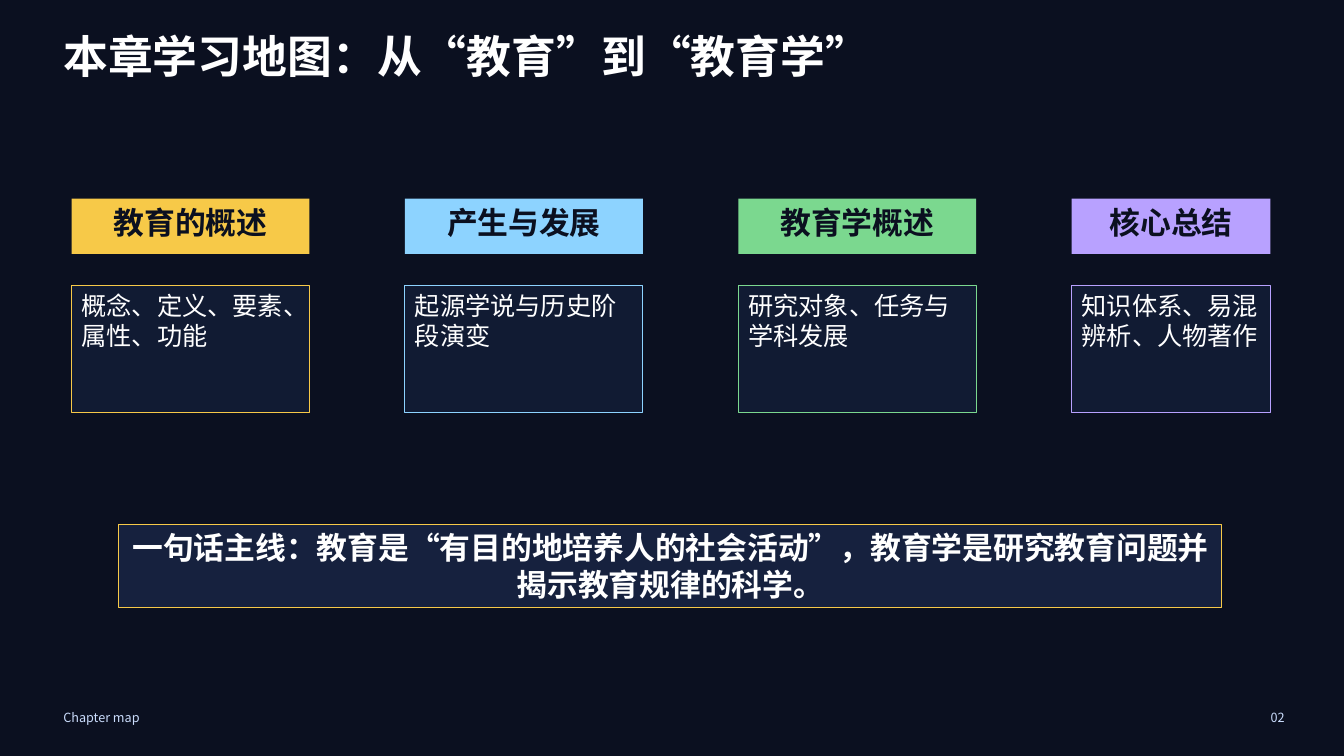
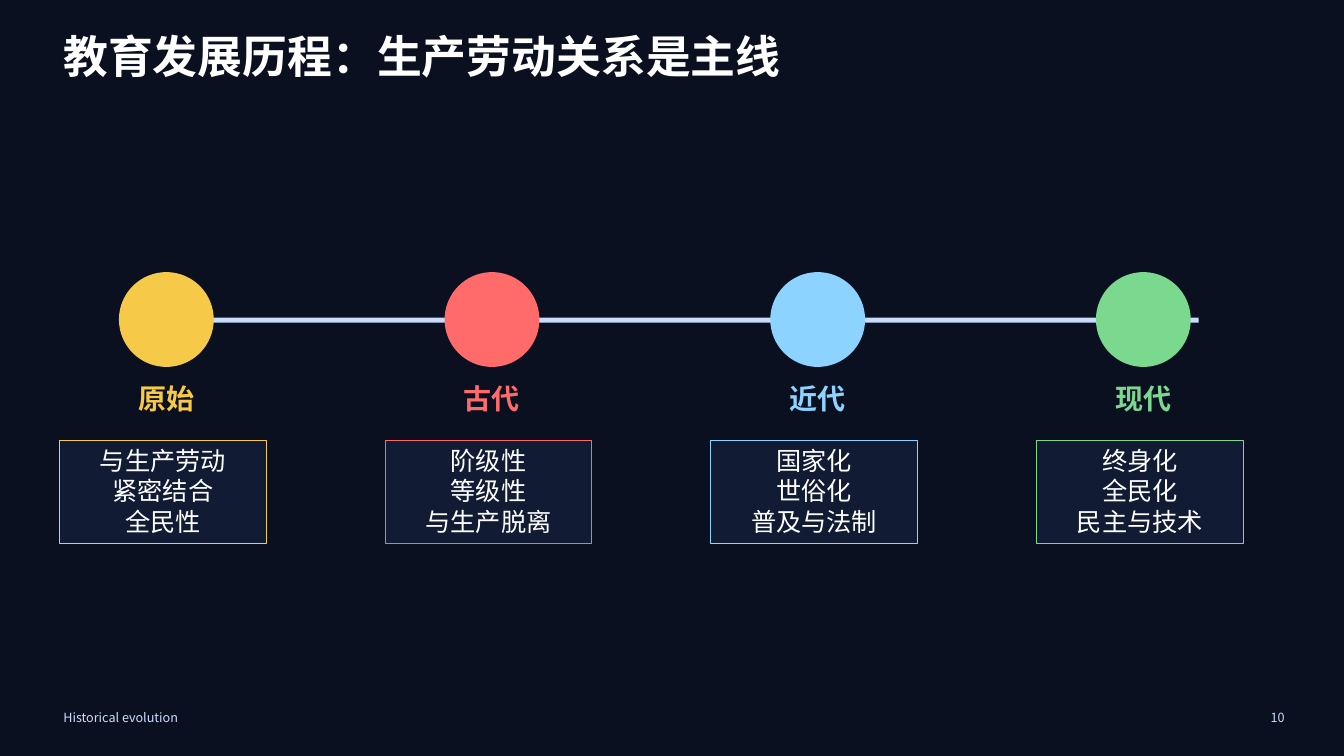
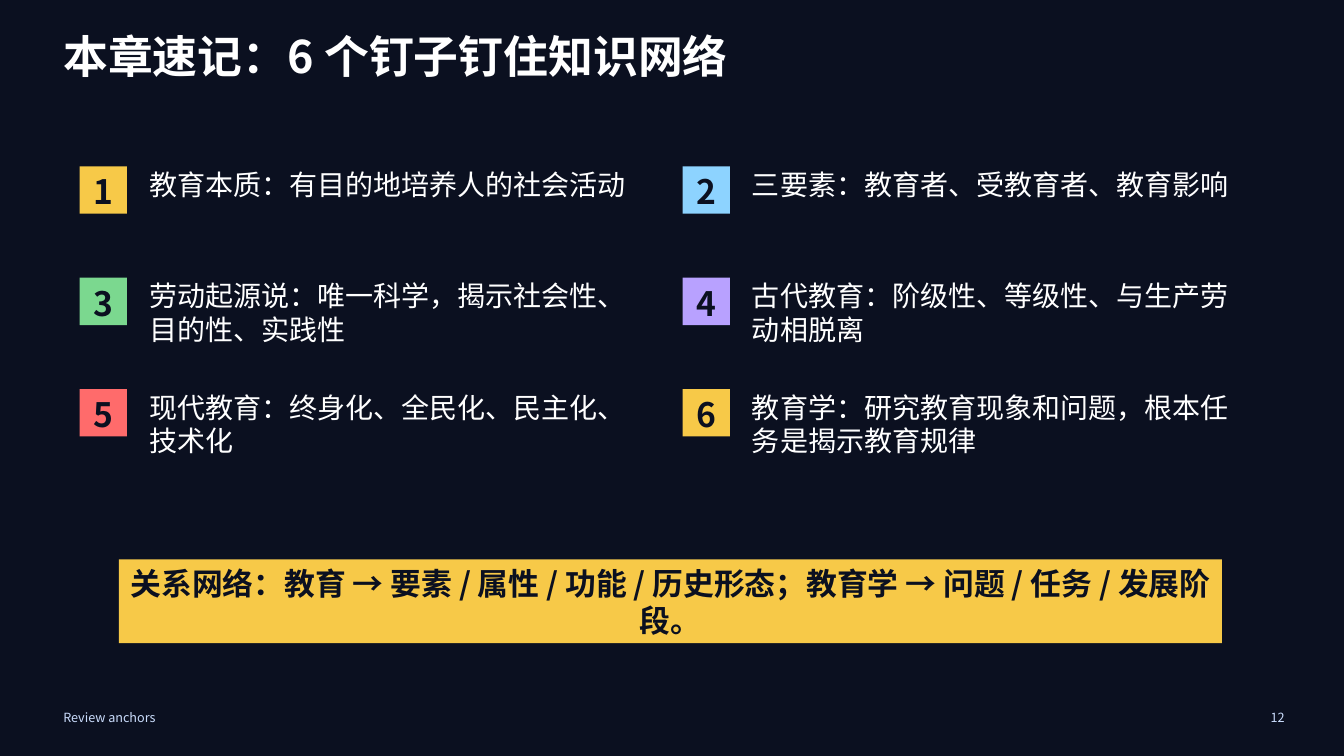
from dataclasses import dataclass

from pptx import Presentation
from pptx.dml.color import RGBColor
from pptx.enum.shapes import MSO_SHAPE as Shape
from pptx.enum.text import MSO_ANCHOR as Anchor, PP_ALIGN as Align
from pptx.oxml.ns import qn
from pptx.util import Inches, Pt


@dataclass(frozen=True)
class Theme:
    font: str = "Noto Sans CJK SC"
    # Colours
    night: str = "0B1020"
    card: str = "111B33"
    banner: str = "16213E"
    white: str = "FFFFFF"
    mist: str = "CADCFC"
    yellow: str = "F7C948"
    blue: str = "8DD3FF"
    green: str = "7BD88F"
    violet: str = "B8A1FF"
    red: str = "FF6B6B"
    # Type sizes
    title: int = 32
    number: int = 24
    heading: int = 22
    label: int = 20
    body: int = 18
    footer: int = 9


THEME = Theme()

# Content
MAP = dict(
    title="本章学习地图：从“教育”到“教育学”",
    footer="Chapter map",
    page="02",
    # heading, summary, colour, width
    parts=[
        ("教育的概述", "概念、定义、要素、属性、功能", THEME.yellow, 2.36),
        ("产生与发展", "起源学说与历史阶段演变", THEME.blue, 2.36),
        ("教育学概述", "研究对象、任务与学科发展", THEME.green, 2.36),
        ("核心总结", "知识体系、易混辨析、人物著作", THEME.violet, 1.97),
    ],
    thread="一句话主线：教育是“有目的地培养人的社会活动”，"
           "教育学是研究教育问题并揭示教育规律的科学。",
)
HISTORY = dict(
    title="教育发展历程：生产劳动关系是主线",
    footer="Historical evolution",
    page="10",
    # era, traits, colour
    eras=[
        ("原始", ["与生产劳动", "紧密结合", "全民性"], THEME.yellow),
        ("古代", ["阶级性", "等级性", "与生产脱离"], THEME.red),
        ("近代", ["国家化", "世俗化", "普及与法制"], THEME.blue),
        ("现代", ["终身化", "全民化", "民主与技术"], THEME.green),
    ],
)
REVIEW = dict(
    title="本章速记：6 个钉子钉住知识网络",
    footer="Review anchors",
    page="12",
    # anchor point, colour
    anchors=[
        ("教育本质：有目的地培养人的社会活动", THEME.yellow),
        ("三要素：教育者、受教育者、教育影响", THEME.blue),
        ("劳动起源说：唯一科学，揭示社会性、目的性、实践性", THEME.green),
        ("古代教育：阶级性、等级性、与生产劳动相脱离", THEME.violet),
        ("现代教育：终身化、全民化、民主化、技术化", THEME.red),
        ("教育学：研究教育现象和问题，根本任务是揭示教育规律", THEME.yellow),
    ],
    network="关系网络：教育 → 要素 / 属性 / 功能 / 历史形态；"
            "教育学 → 问题 / 任务 / 发展阶段。",
)


# Helpers
def spread(first, last, count):
    """Evenly spaced positions from first to last."""
    return [first + (last - first) * i / (count - 1) for i in range(count)]


def write(box, text, *, size, color=THEME.white, bold=False, align=Align.LEFT):
    """Fill a box with one paragraph, or one for each string in a list."""
    frame = box.text_frame
    frame.word_wrap = True
    frame.vertical_anchor = Anchor.TOP
    for i, line in enumerate([text] if isinstance(text, str) else text):
        paragraph = frame.paragraphs[0] if i == 0 else frame.add_paragraph()
        paragraph.alignment = align
        run = paragraph.add_run()
        run.text = line
        font = run.font
        font.name, font.size, font.bold = THEME.font, Pt(size), bold
        font.color.rgb = RGBColor.from_string(color)
        east_asian = run._r.get_or_add_rPr().makeelement(
            qn("a:ea"), {"typeface": THEME.font})
        font._element.find(qn("a:latin")).addnext(east_asian)


def place(slide, at, fill, line=None, kind=Shape.RECTANGLE):
    shape = slide.shapes.add_shape(kind, *map(Inches, at))
    shape.shadow.inherit = False
    shape.fill.solid()
    shape.fill.fore_color.rgb = RGBColor.from_string(fill)
    if line:
        shape.line.color.rgb = RGBColor.from_string(line)
        shape.line.width = Pt(0.75)
    else:
        shape.line.fill.background()
    return shape


def label(slide, at, text, **style):
    write(slide.shapes.add_textbox(*map(Inches, at)), text, **style)


def add_page(prs, content):
    """New slide with the shared title and footer."""
    slide = prs.slides.add_slide(prs.slide_layouts[6])
    label(slide, (0.53, 0.24, 11.34, 0.87), content["title"],
          size=THEME.title, bold=True)
    small = dict(size=THEME.footer, color=THEME.mist)
    label(slide, (0.53, 6.99, 9.45, 0.3), content["footer"], **small)
    label(slide, (11.97, 6.99, 0.87, 0.3), content["page"],
          align=Align.RIGHT, **small)
    return slide


def add_banner(slide, top, text, fill, line=None, color=THEME.white):
    banner = place(slide, (1.18, top, 10.94, 0.83), fill, line)
    write(banner, text, size=THEME.heading, color=color, bold=True,
          align=Align.CENTER)


# Slides
def build_map(prs):
    slide = add_page(prs, MAP)
    parts = MAP["parts"]
    for left, (heading, summary, color, width) in zip(
            spread(0.71, 10.63, len(parts)), parts):
        write(place(slide, (left, 1.97, width, 0.55), color), heading,
              size=THEME.heading, color=THEME.night, bold=True,
              align=Align.CENTER)
        write(place(slide, (left, 2.83, width, 1.26), THEME.card, color),
              summary, size=THEME.body)
    add_banner(slide, 5.2, MAP["thread"], THEME.banner, THEME.yellow)


def build_history(prs):
    slide = add_page(prs, HISTORY)
    eras = HISTORY["eras"]
    place(slide, (1.26, 3.15, 10.63, 0.05), THEME.mist)  # time axis
    for left, (era, traits, color) in zip(
            spread(1.18, 10.87, len(eras)), eras):
        place(slide, (left, 2.7, 0.94, 0.94), color, kind=Shape.OVAL)
        label(slide, (left - 0.18, 3.74, 1.3, 0.5), era, size=THEME.label,
              color=color, bold=True, align=Align.CENTER)
        write(place(slide, (left - 0.59, 4.37, 2.05, 1.02), THEME.card, color),
              traits, size=THEME.body, align=Align.CENTER)


def build_review(prs):
    slide = add_page(prs, REVIEW)
    columns = (0.79, 6.77)
    rows = spread(1.65, 3.86, 3)
    cells = [(left, top) for top in rows for left in columns]
    for number, ((left, top), (point, color)) in enumerate(
            zip(cells, REVIEW["anchors"]), start=1):
        write(place(slide, (left, top, 0.47, 0.47), color), str(number),
              size=THEME.number, color=THEME.night, bold=True,
              align=Align.CENTER)
        label(slide, (left + 0.59, top - 0.04, 5.12, 0.75), point,
              size=THEME.label)
    add_banner(slide, 5.55, REVIEW["network"], THEME.yellow,
               color=THEME.night)


def main():
    prs = Presentation()
    prs.slide_width, prs.slide_height = Inches(13.33), Inches(7.5)
    backdrop = prs.slide_master.background.fill
    backdrop.solid()
    backdrop.fore_color.rgb = RGBColor.from_string(THEME.night)
    for build in (build_map, build_history, build_review):
        build(prs)
    prs.save("out.pptx")


if __name__ == "__main__":
    main()
